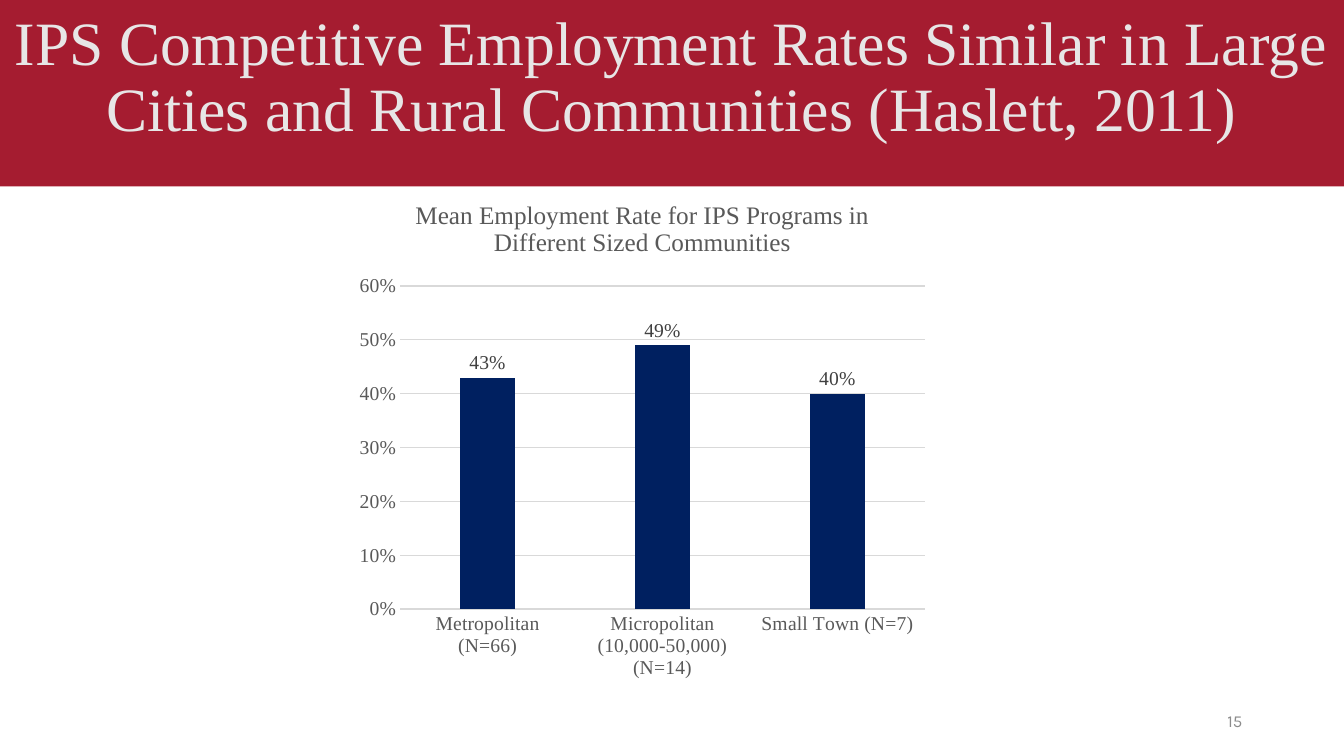
from dataclasses import dataclass
from typing import Any

from pptx import Presentation
from pptx.chart.data import CategoryChartData
from pptx.dml.color import RGBColor
from pptx.enum.chart import XL_CHART_TYPE, XL_LABEL_POSITION, XL_TICK_MARK
from pptx.enum.shapes import MSO_SHAPE
from pptx.enum.text import MSO_ANCHOR, MSO_AUTO_SIZE, PP_ALIGN
from pptx.util import Inches, Pt

CRIMSON = RGBColor(0xA5, 0x1C, 0x30)
PALE = RGBColor(0xE7, 0xE6, 0xE6)
NAVY = RGBColor(0x00, 0x20, 0x60)
GRID = RGBColor(0xD9, 0xD9, 0xD9)
DARK = RGBColor(0x40, 0x40, 0x40)
GREY = RGBColor(0x59, 0x59, 0x59)
MUTED = RGBColor(0x8C, 0x8C, 0x8C)
SERIF, SANS = "Times New Roman", "Karla"


@dataclass
class Box:
    left: float
    top: float
    width: float
    height: float

    def spots(self) -> list[int]:
        return [Inches(v) for v in (self.left, self.top, self.width, self.height)]


@dataclass
class Label:
    text: str
    box: Box
    size: int
    face: str
    color: RGBColor
    align: PP_ALIGN
    space: float


@dataclass
class Rate:
    place: str
    value: float


HEAD = Label(
    "IPS Competitive Employment Rates Similar in Large Cities and Rural "
    "Communities (Haslett, 2011)",
    Box(0, -0.02, 13.33, 1.6), 44, SERIF, PALE, PP_ALIGN.CENTER, 0.9)
PAGE = Label("15", Box(9.42, 6.95, 3, 0.4), 12, SANS, MUTED, PP_ALIGN.RIGHT, 1.0)
RATES = [
    Rate("Metropolitan (N=66)", 0.43),
    Rate("Micropolitan (10,000-50,000) (N=14)", 0.49),
    Rate("Small Town (N=7)", 0.40),
]


def apply(target: Any, values: dict[str, Any]) -> None:
    for name, value in values.items():
        setattr(target, name, value)


def style(font: Any, size: int, face: str, color: RGBColor) -> None:
    apply(font, {"size": Pt(size), "name": face, "bold": False})
    font.color.rgb = color


def rule(line: Any) -> None:
    line.color.rgb = GRID
    line.width = Pt(0.75)


def write(shape: Any, label: Label) -> None:
    left, top, width, height = label.box.spots()
    apply(shape, {"left": left, "top": top, "width": width, "height": height})
    frame = shape.text_frame
    apply(frame, {"text": label.text, "word_wrap": True,
                  "auto_size": MSO_AUTO_SIZE.NONE,
                  "vertical_anchor": MSO_ANCHOR.MIDDLE})
    para = frame.paragraphs[0]
    apply(para, {"alignment": label.align, "line_spacing": label.space})
    style(para.runs[0].font, label.size, label.face, label.color)


def plot(slide: Any, box: Box, rates: list[Rate]) -> None:
    data = CategoryChartData(number_format="0%")
    data.categories = [rate.place for rate in rates]
    data.add_series("Series 1", [rate.value for rate in rates])
    chart = slide.shapes.add_chart(
        XL_CHART_TYPE.COLUMN_CLUSTERED, *box.spots(), data).chart
    style(chart.font, 14, SERIF, GREY)
    apply(chart, {"has_legend": False, "has_title": True})

    # Chart title
    frame = chart.chart_title.text_frame
    frame.text = "Mean Employment Rate for IPS Programs in Different Sized Communities"
    style(frame.paragraphs[0].runs[0].font, 18, SERIF, GREY)
    chart.chart_title.include_in_layout = False

    # Axes
    for axis in (chart.category_axis, chart.value_axis):
        apply(axis, {"major_tick_mark": XL_TICK_MARK.NONE,
                     "minor_tick_mark": XL_TICK_MARK.NONE})
        style(axis.tick_labels.font, 14, SERIF, GREY)
    rule(chart.category_axis.format.line)
    scale = chart.value_axis
    apply(scale, {"minimum_scale": 0, "maximum_scale": 0.6, "major_unit": 0.1})
    apply(scale.tick_labels, {"number_format": "0%", "number_format_is_linked": False})
    scale.format.line.fill.background()
    rule(scale.major_gridlines.format.line)

    # Columns and their labels
    bars = chart.plots[0]
    apply(bars, {"gap_width": 219, "overlap": -27, "vary_by_categories": False})
    row = bars.series[0]
    row.format.fill.solid()
    row.format.fill.fore_color.rgb = NAVY
    tags = row.data_labels
    apply(tags, {"show_value": True, "position": XL_LABEL_POSITION.OUTSIDE_END,
                 "number_format": "0%", "number_format_is_linked": False})
    style(tags.font, 14, SERIF, DARK)


def main() -> None:
    deck = Presentation()
    apply(deck, {"slide_width": Inches(13.33), "slide_height": Inches(7.5)})
    slide = deck.slides.add_slide(deck.slide_layouts[5])
    shapes = slide.shapes

    # Red band behind the title
    band = shapes.add_shape(MSO_SHAPE.RECTANGLE, *Box(0, 0, 13.33, 1.85).spots())
    band.shadow.inherit = False
    band.fill.solid()
    band.fill.fore_color.rgb = CRIMSON
    band.line.fill.background()
    shapes.title.element.addprevious(band.element)

    # Title, page number and chart
    write(shapes.title, HEAD)
    write(shapes.add_textbox(*PAGE.box.spots()), PAGE)
    plot(slide, Box(3.45, 1.78, 5.84, 5.06), RATES)
    deck.save("out.pptx")


if __name__ == "__main__":
    main()
